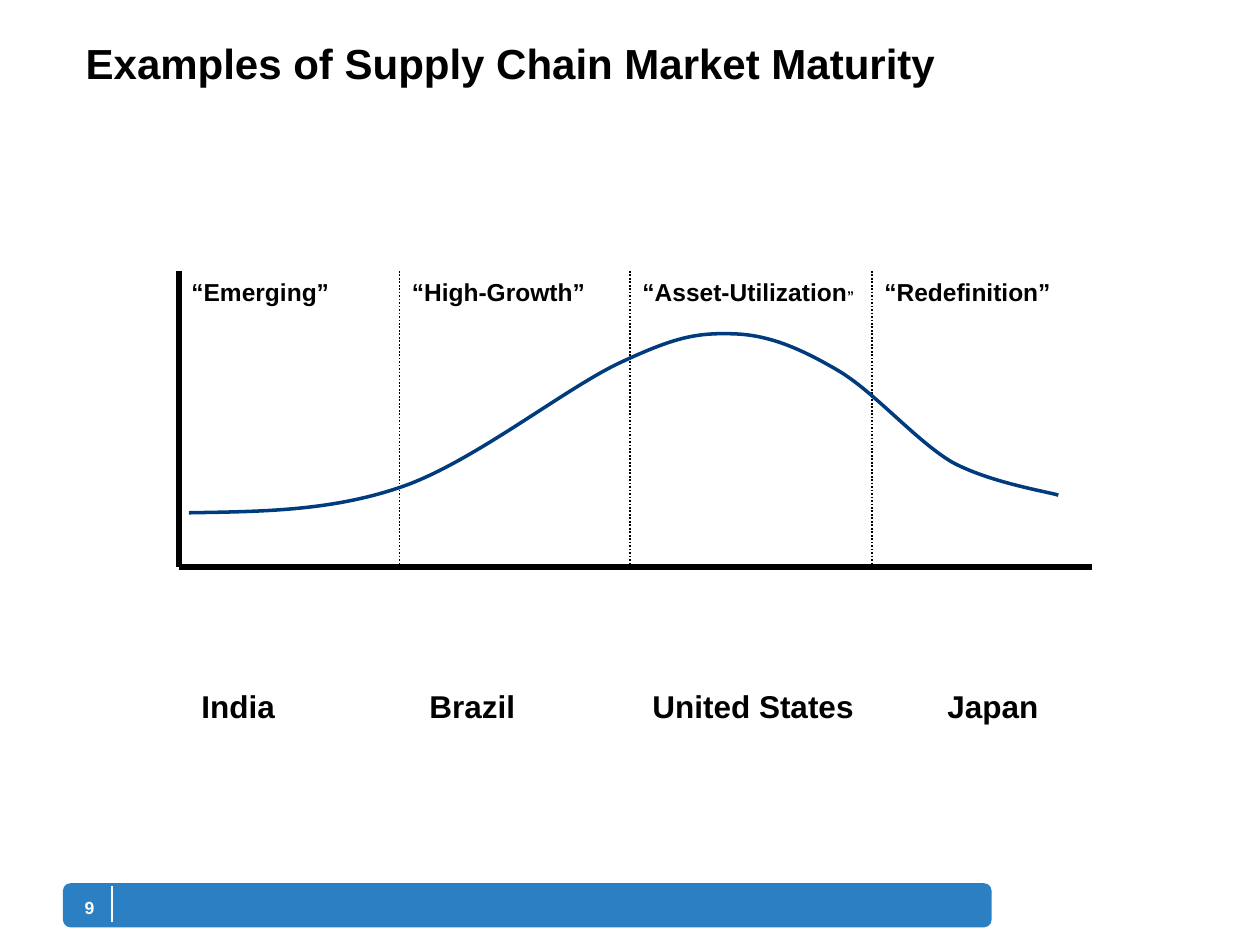
import pptx
import pptx.dml.color
import pptx.enum.dml
import pptx.enum.shapes
import pptx.enum.text
import pptx.oxml.ns
import pptx.util
import lxml.etree

BLACK = pptx.dml.color.RGBColor(0x00, 0x00, 0x00)
WHITE = pptx.dml.color.RGBColor(0xFF, 0xFF, 0xFF)
BAR_BLUE = pptx.dml.color.RGBColor(0x2B, 0x7F, 0xC3)
CURVE_BLUE = pptx.dml.color.RGBColor(0x00, 0x3B, 0x7E)
INCH = pptx.util.Inches
qn = pptx.oxml.ns.qn

STAGES = [
    (1.75, [("“Emerging”", 14)], "India", 0.08, 0.78),
    (1.83, [("“High-Growth”", 14)], "Brazil", 0.14, 0.88),
    (1.92, [("“Asset-Utilization", 14), ("”", 8)], "United States", 0.08, 1.8),
    (1.75, [("“Redefinition”", 14)], "Japan", 0.5, 0.92),
]
CURVE = [
    (0.08, 1.92), (0.64, 1.91), (1.21, 1.91), (1.78, 1.71),
    (2.35, 1.51), (3.08, 0.92), (3.52, 0.72),
    (3.95, 0.52), (4.12, 0.49), (4.41, 0.5),
    (4.69, 0.51), (4.94, 0.62), (5.23, 0.79),
    (5.52, 0.96), (5.85, 1.35), (6.14, 1.52),
    (6.44, 1.68), (6.88, 1.75), (6.98, 1.78),
]


def write(frame, runs, color=BLACK, align=pptx.enum.text.PP_ALIGN.LEFT, **settings):
    """Fill a text frame with one bold paragraph of (text, size) runs."""
    for name, value in settings.items():
        setattr(frame, name, value)
    paragraph = frame.paragraphs[0]
    paragraph.alignment = align
    for text, size in runs:
        run = paragraph.add_run()
        run.text = text
        look = {"name": "Arial", "size": pptx.util.Pt(size), "bold": True}
        for name, value in look.items():
            setattr(run.font, name, value)
        run.font.color.rgb = color


def add_text(slide, box, runs, **settings):
    """Add a text box at an inch box."""
    frame = slide.shapes.add_textbox(*map(INCH, box)).text_frame
    write(frame, runs, **{"word_wrap": True, **settings})


def add_line(slide, start, end, color, width, dash=None):
    """Draw a straight line between two inch points."""
    line = slide.shapes.add_connector(
        pptx.enum.shapes.MSO_CONNECTOR.STRAIGHT, *map(INCH, (*start, *end)))
    line.line.color.rgb = color
    line.line.width = pptx.util.Pt(width)
    if dash:
        line.line.dash_style = dash
    lxml.etree.SubElement(line._element.spPr, qn("a:effectLst"))


def add_footer(slide, box, number):
    """Place the rounded bar with the page number and its divider."""
    left, top, width, height = box
    bar = slide.shapes.add_shape(
        pptx.enum.shapes.MSO_SHAPE.ROUNDED_RECTANGLE, *map(INCH, box))
    bar.shadow.inherit = False
    bar.fill.solid()
    bar.fill.fore_color.rgb = BAR_BLUE
    bar.line.fill.background()
    add_text(slide, (left + 0.03, top + 0.05, 0.36, 0.28), [(number, 10)],
             color=WHITE, align=pptx.enum.text.PP_ALIGN.CENTER,
             margin_left=0, margin_right=0,
             vertical_anchor=pptx.enum.text.MSO_ANCHOR.MIDDLE)
    divider = left + 0.39
    add_line(slide, (divider, top + 0.02), (divider, top + height - 0.04), WHITE, 1)


def add_curve(slide, left, top):
    """Draw the maturity curve as smooth cubic segments."""
    points = [(INCH(left + x), INCH(top + y)) for x, y in CURVE]
    builder = slide.shapes.build_freeform(*points[0], scale=1.0)
    builder.add_line_segments(points[1:], close=False)
    curve = builder.convert_to_shape()
    curve.shadow.inherit = False
    curve.fill.background()
    curve.line.color.rgb = CURVE_BLUE
    curve.line.width = pptx.util.Pt(2)
    outline = next(curve._element.iter(qn("a:path")))
    segments = outline.findall(qn("a:lnTo"))
    for first in range(0, len(segments), 3):
        cubic = lxml.etree.SubElement(outline, qn("a:cubicBezTo"))
        for segment in segments[first:first + 3]:
            cubic.append(segment[0])
            outline.remove(segment)


def add_maturity_chart(slide, box):
    """Place stage columns, axes, curve and the country under each stage."""
    left, top, width, height = box
    bottom = top + height
    edges = [left + sum(stage[0] for stage in STAGES[:i]) for i in range(len(STAGES))]
    for edge, (column, heading, *_) in zip(edges, STAGES):
        add_text(slide, (edge, top, column, 1.6), heading)
    add_line(slide, (left, bottom), (left + width, bottom), BLACK, 3)
    add_line(slide, (left, top), (left, bottom), BLACK, 3)
    for edge in edges[1:]:
        add_line(slide, (edge, top), (edge, bottom), BLACK, 1,
                 pptx.enum.dml.MSO_LINE.ROUND_DOT)
    add_curve(slide, left, top)
    for edge, (_, _, country, indent, span) in zip(edges, STAGES):
        add_text(slide, (edge + indent, bottom + 0.9, span, 0.4), [(country, 18)],
                 word_wrap=False,
                 auto_size=pptx.enum.text.MSO_AUTO_SIZE.SHAPE_TO_FIT_TEXT)


def add_title(slide, box, text):
    """Move and fill the title placeholder."""
    title = slide.shapes.title
    for name, value in zip(("left", "top", "width", "height"), box):
        setattr(title, name, INCH(value))
    write(title.text_frame, [(text, 24)], word_wrap=True,
          vertical_anchor=pptx.enum.text.MSO_ANCHOR.TOP,
          auto_size=pptx.enum.text.MSO_AUTO_SIZE.SHAPE_TO_FIT_TEXT)


def main():
    """Build and save the slide."""
    deck = pptx.Presentation()
    deck.slide_width, deck.slide_height = INCH(10), INCH(7.5)
    slide = deck.slides.add_slide(deck.slide_layouts.get_by_name("Title Only"))
    add_footer(slide, (0.5, 7.01, 7.37, 0.35), "9")
    add_maturity_chart(slide, (1.42, 2.15, 7.25, 2.35))
    add_title(slide, (0.58, 0.25, 8.05, 0.5), "Examples of Supply Chain Market Maturity")
    deck.save("out.pptx")


if __name__ == "__main__":
    main()
